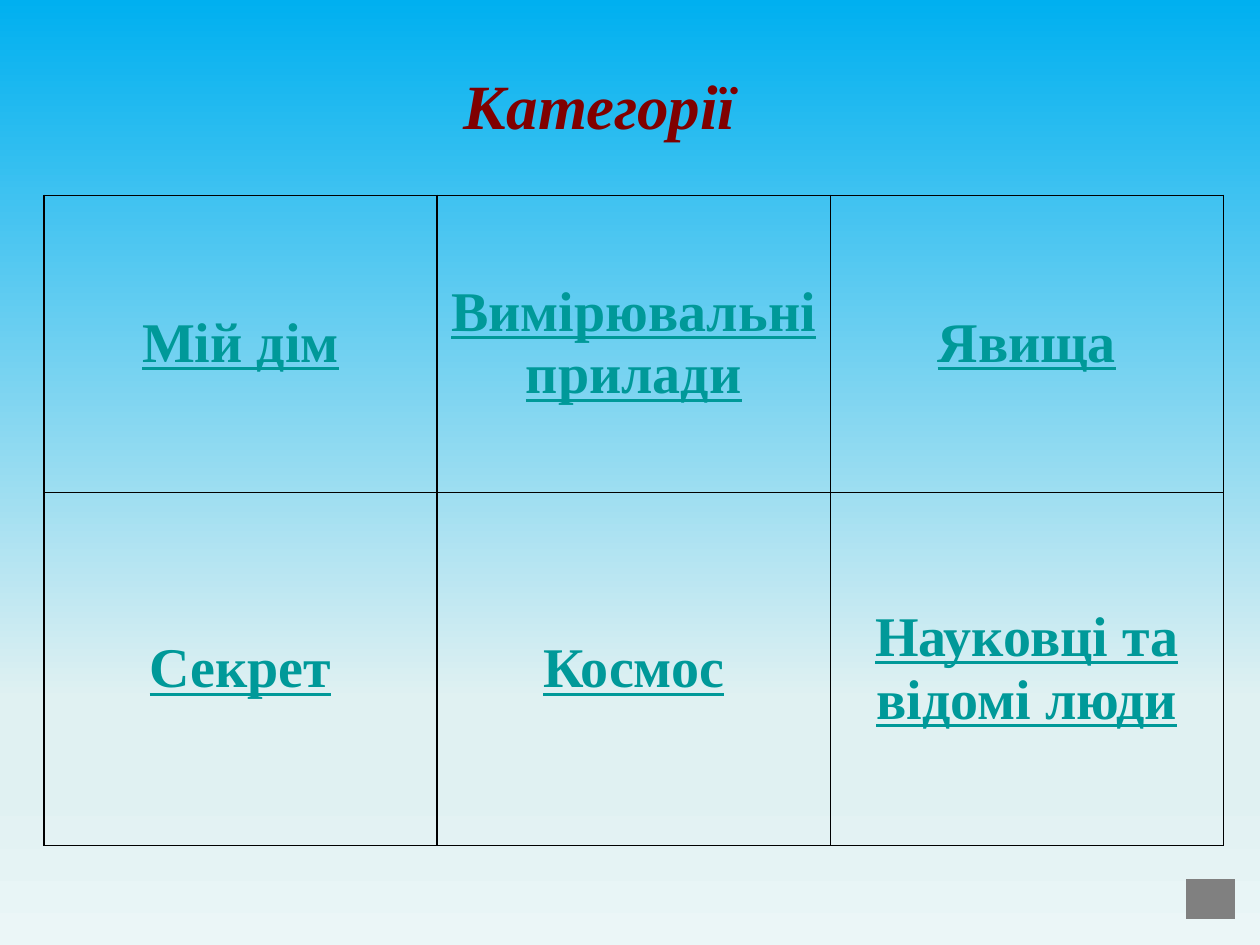
from dataclasses import dataclass

from lxml import etree
from pptx import Presentation
from pptx.dml.color import RGBColor
from pptx.enum.shapes import MSO_SHAPE
from pptx.enum.text import MSO_ANCHOR, PP_ALIGN
from pptx.oxml.ns import qn
from pptx.util import Inches, Pt

CENTER = PP_ALIGN.CENTER
MIDDLE = MSO_ANCHOR.MIDDLE
BUTTON = MSO_SHAPE.ACTION_BUTTON_CUSTOM
BLANK_LAYOUT = 6


@dataclass(frozen=True)
class Theme:
    """Colours, font and type sizes of the slide."""
    font: str = "Times New Roman"
    title_color: str = "800000"
    title_size: int = 36
    category_color: str = "009999"
    category_size: int = 32
    border_color: str = "000000"
    border_width: int = 1
    button_color: str = "808080"
    sky: tuple = ((0, "00B0F0"), (74, "E0F1F2"), (83, "E0F1F2"), (100, "EBF6F7"))


THEME = Theme()
CATEGORIES = (
    ("Мій дім", "Вимірювальні прилади", "Явища"),
    ("Секрет", "Космос", "Науковці та відомі люди"),
)
ROW_HEIGHTS = (2.36, 2.8)
COLUMN_WIDTH = 3.12


def add_color(parent, color):
    """Append an RGB colour element to parent."""
    etree.SubElement(parent, qn("a:srgbClr"), val=color)


def paint_sky(slide):
    """Fill the background with a gradient from top to bottom."""
    fill = slide.background.fill
    fill.gradient()
    fill.gradient_angle = 270
    stops = next(slide.element.iter(qn("a:gsLst")))
    for stop in list(stops):
        stops.remove(stop)
    for percent, color in THEME.sky:
        add_color(etree.SubElement(stops, qn("a:gs"), pos=str(percent * 1000)), color)


def write(frame, text, color, **formats):
    """Write one centred paragraph with the given font formats."""
    paragraph = frame.paragraphs[0]
    paragraph.alignment = CENTER
    run = paragraph.add_run()
    run.text = text
    run.font.color.rgb = RGBColor.from_string(color)
    for name, value in {"name": THEME.font, "bold": True, **formats}.items():
        setattr(run.font, name, value)


def add_title(slide, text):
    """Add the slide title."""
    title = slide.shapes.add_textbox(Inches(1.61), Inches(0.44), Inches(6.3), Inches(0.94))
    frame = title.text_frame
    frame.word_wrap = False
    frame.margin_top = Inches(0.09)
    write(frame, text, THEME.title_color, size=Pt(THEME.title_size), italic=True)


def outline(cell):
    """Draw a border on the four sides of a cell."""
    properties = cell._tc.get_or_add_tcPr()
    for position, side in enumerate(("a:lnL", "a:lnR", "a:lnT", "a:lnB")):
        line = etree.Element(qn(side), w=str(Pt(THEME.border_width)))
        add_color(etree.SubElement(line, qn("a:solidFill")), THEME.border_color)
        properties.insert(position, line)


def add_categories(slide):
    """Add the table of categories."""
    columns = len(CATEGORIES[0])
    table = slide.shapes.add_table(
        len(CATEGORIES), columns, Inches(0.35), Inches(1.55),
        Inches(COLUMN_WIDTH * columns), Inches(sum(ROW_HEIGHTS))).table
    table.first_row = table.horz_banding = False
    for column in table.columns:
        column.width = Inches(COLUMN_WIDTH)
    for row, height, names in zip(table.rows, ROW_HEIGHTS, CATEGORIES):
        row.height = Inches(height)
        for cell, name in zip(row.cells, names):
            cell.fill.background()
            cell.vertical_anchor = MIDDLE
            outline(cell)
            write(cell.text_frame, name, THEME.category_color,
                  size=Pt(THEME.category_size), underline=True)


def add_button(slide):
    """Add the plain action button in the corner."""
    button = slide.shapes.add_shape(
        BUTTON, Inches(9.41), Inches(6.98), Inches(0.39), Inches(0.31))
    button.shadow.inherit = False
    button.fill.solid()
    button.fill.fore_color.rgb = RGBColor.from_string(THEME.button_color)
    button.line.fill.background()


def main():
    """Build the slide of categories and save it."""
    deck = Presentation()
    deck.slide_width, deck.slide_height = Inches(10), Inches(7.5)
    slide = deck.slides.add_slide(deck.slide_layouts[BLANK_LAYOUT])
    paint_sky(slide)
    add_title(slide, "Категорії")
    add_categories(slide)
    add_button(slide)
    deck.save("out.pptx")


if __name__ == "__main__":
    main()
